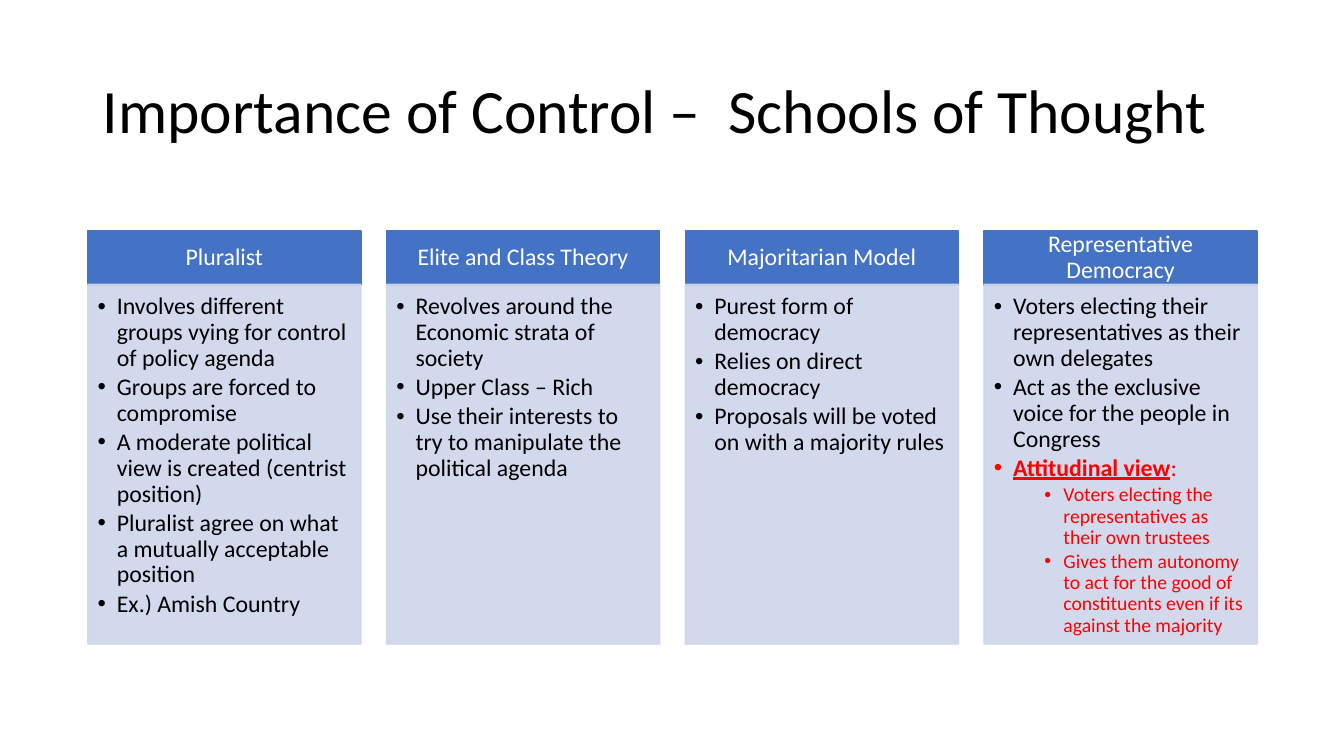
from lxml import etree
from pptx import Presentation
from pptx.dml.color import RGBColor
from pptx.enum.shapes import MSO_SHAPE
from pptx.enum.text import MSO_ANCHOR, MSO_AUTO_SIZE, PP_ALIGN
from pptx.oxml.ns import qn
from pptx.util import Inches, Pt

RECTANGLE = MSO_SHAPE.RECTANGLE
TOP, MIDDLE = MSO_ANCHOR.TOP, MSO_ANCHOR.MIDDLE
LEFT, CENTER = PP_ALIGN.LEFT, PP_ALIGN.CENTER
NO_FIT = MSO_AUTO_SIZE.NONE

COLORS = {
    "header": "4472C4",
    "panel": "CFD5EA",
    "ink": "000000",
    "light": "FFFFFF",
    "accent": "FF0000",
}

TITLE = "Importance of Control –  Schools of Thought"

SCHOOLS = [
    ("Pluralist", [
        {"text": "Involves different groups vying for control of policy agenda"},
        {"text": "Groups are forced to compromise"},
        {"text": "A moderate political view is created (centrist position)"},
        {"text": "Pluralist agree on what a mutually acceptable position"},
        {"text": "Ex.) Amish Country"},
    ]),
    ("Elite and Class Theory", [
        {"text": "Revolves around the Economic strata of society"},
        {"text": "Upper Class – Rich"},
        {"text": "Use their interests to try to manipulate the political agenda"},
    ]),
    ("Majoritarian Model", [
        {"text": "Purest form of democracy"},
        {"text": "Relies on direct democracy"},
        {"text": "Proposals will be voted on with a majority rules"},
    ]),
    ("Representative Democracy", [
        {"text": "Voters electing their representatives as their own delegates"},
        {"text": "Act as the exclusive voice for the people in Congress"},
        {"text": ":", "lead": "Attitudinal view", "color": "accent"},
        {"text": "Voters electing the representatives as their own trustees",
         "level": 2, "size": 14, "color": "accent"},
        {"text": "Gives them autonomy to act for the good of constituents "
                 "even if its against the majority",
         "level": 2, "size": 14, "color": "accent"},
    ]),
]


def write(para, text, lead="", level=0, size=17, color="ink", align=LEFT, after=0.15):
    para.alignment = align
    para.level = level
    para.line_spacing = 0.9
    para.space_before = Pt(0)
    para.space_after = Pt(size * after)
    for words, strong in ((lead, True), (text, False)):
        if words:
            span = para.add_run()
            span.text = words
            span.font.name = "Calibri"
            span.font.size = Pt(size)
            span.font.bold = strong
            span.font.underline = strong
            span.font.color.rgb = RGBColor.from_string(COLORS[color])
    if level:
        properties = para._p.get_or_add_pPr()
        indent = Inches(0.19)
        properties.set("marL", str(indent + Inches(0.5) * (level - 1)))
        properties.set("indent", str(-indent))
        etree.SubElement(properties, qn("a:buFont")).set("typeface", "Arial")
        etree.SubElement(properties, qn("a:buChar")).set("char", "•")


class Page:
    left, pitch, width = 0.87, 2.963, 2.71
    rows = {"header": (2.29, 0.54), "panel": (2.82, 3.57)}

    def __init__(self, deck):
        self.slide = deck.slides.add_slide(deck.slide_layouts[5])

    def title(self, text):
        box = self.slide.shapes.title
        box.left, box.top = Inches(0.92), Inches(0.4)
        box.width, box.height = Inches(11.5), Inches(1.45)
        box.text_frame.auto_size = NO_FIT
        box.text_frame.word_wrap = True
        box.text_frame.vertical_anchor = MIDDLE
        write(box.text_frame.paragraphs[0], text, size=44, after=0)

    def block(self, column, row, margins, anchor, opacity=100):
        top, height = self.rows[row]
        box = self.slide.shapes.add_shape(
            RECTANGLE, Inches(self.left + column * self.pitch), Inches(top),
            Inches(self.width), Inches(height))
        box.shadow.inherit = False
        color = RGBColor.from_string(COLORS[row])
        box.fill.solid()
        box.fill.fore_color.rgb = color
        box.line.color.rgb = color
        box.line.width = Pt(1)
        if opacity < 100:
            for tint in box._element.spPr.iter(qn("a:srgbClr")):
                etree.SubElement(tint, qn("a:alpha")).set("val", str(opacity * 1000))
        frame = box.text_frame
        frame.word_wrap = True
        frame.vertical_anchor = anchor
        (frame.margin_left, frame.margin_top,
         frame.margin_right, frame.margin_bottom) = map(Inches, margins)
        return frame

    def header(self, column, text):
        frame = self.block(column, "header", (0.13, 0.08, 0.13, 0.08), MIDDLE)
        write(frame.paragraphs[0], text, color="light", align=CENTER, after=0.35)

    def panel(self, column, points):
        frame = self.block(column, "panel", (0.1, 0.1, 0.13, 0.15), TOP, opacity=90)
        for index, point in enumerate(points):
            para = frame.add_paragraph() if index else frame.paragraphs[0]
            write(para, **{"level": 1, **point})


def main():
    deck = Presentation()
    deck.slide_width, deck.slide_height = Inches(13.33), Inches(7.5)
    page = Page(deck)
    page.title(TITLE)
    for column, (name, points) in enumerate(SCHOOLS):
        page.header(column, name)
        page.panel(column, points)
    deck.save("out.pptx")


if __name__ == "__main__":
    main()
